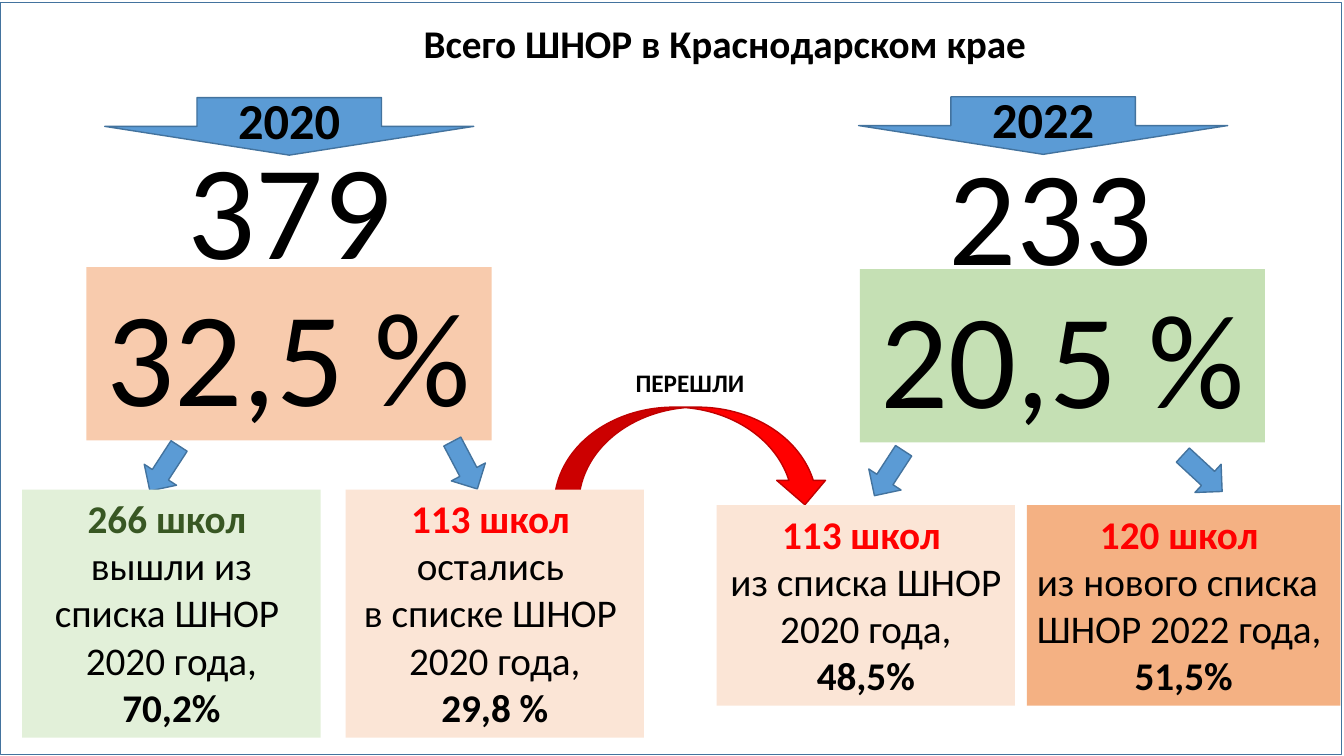
from pptx import Presentation
from pptx import util as u
from pptx.dml.color import RGBColor
from pptx.enum import shapes, text

ARROW = shapes.MSO_SHAPE.DOWN_ARROW
RECTANGLE = shapes.MSO_SHAPE.RECTANGLE
CENTER, LEFT = text.PP_ALIGN.CENTER, text.PP_ALIGN.LEFT
MIDDLE, TOP = text.MSO_ANCHOR.MIDDLE, text.MSO_ANCHOR.TOP
BLUE, DARK_BLUE, BLACK, RED = "5B9BD5", "43739E", "000000", "FF0000"


def color(value):
    return RGBColor.from_string(value)


def add_figure(slide, kind, box, fill=None, line=None, width=1, rotation=0):
    shape = slide.shapes.add_shape(kind, *map(u.Cm, box))
    shape.shadow.inherit = False
    shape.rotation = rotation
    if fill:
        shape.fill.solid()
        shape.fill.fore_color.rgb = color(fill)
    else:
        shape.fill.background()
    if line:
        shape.line.color.rgb = color(line)
        shape.line.width = u.Pt(width)
    else:
        shape.line.fill.background()
    return shape


def write(shape, lines, anchor=TOP, grow=True, **settings):
    """Each line is (words, size, bold, colour, alignment)."""
    frame = shape.text_frame
    frame_format = {
        "word_wrap": True,
        "vertical_anchor": anchor,
        "auto_size": text.MSO_AUTO_SIZE.SHAPE_TO_FIT_TEXT if grow else text.MSO_AUTO_SIZE.NONE,
        **settings,
    }
    for name, value in frame_format.items():
        setattr(frame, name, value)
    for index, (words, size, bold, ink, alignment) in enumerate(lines):
        paragraph = frame.add_paragraph() if index else frame.paragraphs[0]
        paragraph.alignment = alignment
        run = paragraph.add_run()
        run.text = words
        font_format = {"name": "Calibri", "size": u.Pt(size), "bold": bold}
        for name, value in font_format.items():
            setattr(run.font, name, value)
        run.font.color.rgb = color(ink)


def add_words(slide, box, line, **settings):
    shape = slide.shapes.add_textbox(*map(u.Cm, box))
    write(shape, [line], **settings)
    return shape


def add_header(slide, left, top, width, height):
    margin = u.Cm(0.1)
    sides = ("left", "top", "right", "bottom")
    title = add_words(
        slide, (left, top, width, height),
        ("Всего ШНОР в Краснодарском крае", 28, True, BLACK, CENTER),
        anchor=MIDDLE, grow=False, **{f"margin_{side}": margin for side in sides})
    title.text_frame.paragraphs[0].line_spacing = 0.9


def add_transfer(slide, left, top, width, height):
    add_figure(slide, shapes.MSO_SHAPE.CURVED_DOWN_ARROW,
               (left, top + 1.14, width, height - 1.14), RED, "C00000")
    add_words(slide, (left + 1.8, top, 3.45, 1.02), ("ПЕРЕШЛИ", 18, True, BLACK, LEFT))


def add_year(slide, left, top, year):
    def place(offset, width, height):
        return left + offset[0], top + offset[1], width, height

    # Year arrow, number of schools and their share
    banner = add_figure(slide, ARROW, place(year["banner"], 9.3, 1.45), BLUE, DARK_BLUE)
    write(banner, [(year["name"], 36, True, BLACK, CENTER)], MIDDLE, grow=False)
    add_words(slide, place(year["count_at"], 9.3, 4.37),
              (year["count"], 96, False, BLACK, CENTER))
    share = add_figure(slide, RECTANGLE, place(year["share_at"], 10.21, 4.37), year["fill"])
    write(share, [(year["share"], 96, False, BLACK, CENTER)])

    # Arrows to the groups
    for offset, rotation in year["arrows"]:
        add_figure(slide, ARROW, place(offset, 0.97, 1.35), BLUE, DARK_BLUE, rotation=rotation)

    # Groups of schools
    for offset, width, fill, ink, alignment, (schools, *middle, percent) in year["groups"]:
        group = add_figure(slide, RECTANGLE, place(offset, width, year["group_height"]), fill)
        write(group, [(schools, 28, True, ink, CENTER),
                      *((words, 28, False, BLACK, alignment) for words in middle),
                      (percent, 28, True, BLACK, CENTER)])


YEAR_2020 = {
    "name": "2020", "banner": (2.08, 0),
    "count": "379", "count_at": (2.08, 0.56),
    "share": "32,5 %", "share_at": (1.62, 4.27), "fill": "F8CBAD",
    "arrows": [((3.1, 8.67), 33), ((10.67, 8.59), 332.2)],
    "group_height": 6.25,
    "groups": [
        ((0, 9.88), 7.52, "E2F0D9", "385723", CENTER,
         ["266 школ ", "вышли из списка ШНОР ", "2020 года,", "70,2%"]),
        ((8.15, 9.88), 7.52, "FBE5D6", RED, CENTER,
         ["113 школ ", "остались ", "в списке ШНОР ", "2020 года,", "29,8 %"]),
    ],
}
YEAR_2022 = {
    "name": "2022", "banner": (3.58, 0),
    "count": "233", "count_at": (3.78, 0.74),
    "share": "20,5 %", "share_at": (3.61, 4.34), "fill": "C5E0B4",
    "arrows": [((3.86, 8.81), 33), ((11.76, 8.81), 312.8)],
    "group_height": 5.05,
    "groups": [
        ((0, 10.29), 7.52, "FBE5D6", RED, CENTER,
         ["113 школ ", "из списка ШНОР ", "2020 года,", "48,5%"]),
        ((7.82, 10.29), 7.9, "F4B183", RED, LEFT,
         ["120 школ ", "из нового списка", "ШНОР 2022 года,", "51,5%"]),
    ],
}


def main():
    presentation = Presentation()
    presentation.slide_width, presentation.slide_height = u.Cm(33.87), u.Cm(19.05)
    slide = presentation.slides.add_slide(presentation.slide_layouts[6])

    # Slide frame
    add_figure(slide, RECTANGLE, (0, 0.05, 33.81, 18.95), line=DARK_BLUE, width=0.25)

    add_transfer(slide, 13.97, 9.12, 6.93, 3.6)
    add_header(slide, 3.33, 0, 29.87, 2.31)
    add_year(slide, 0.56, 2.46, YEAR_2020)
    add_year(slide, 18.06, 2.44, YEAR_2022)
    presentation.save("out.pptx")


if __name__ == "__main__":
    main()
